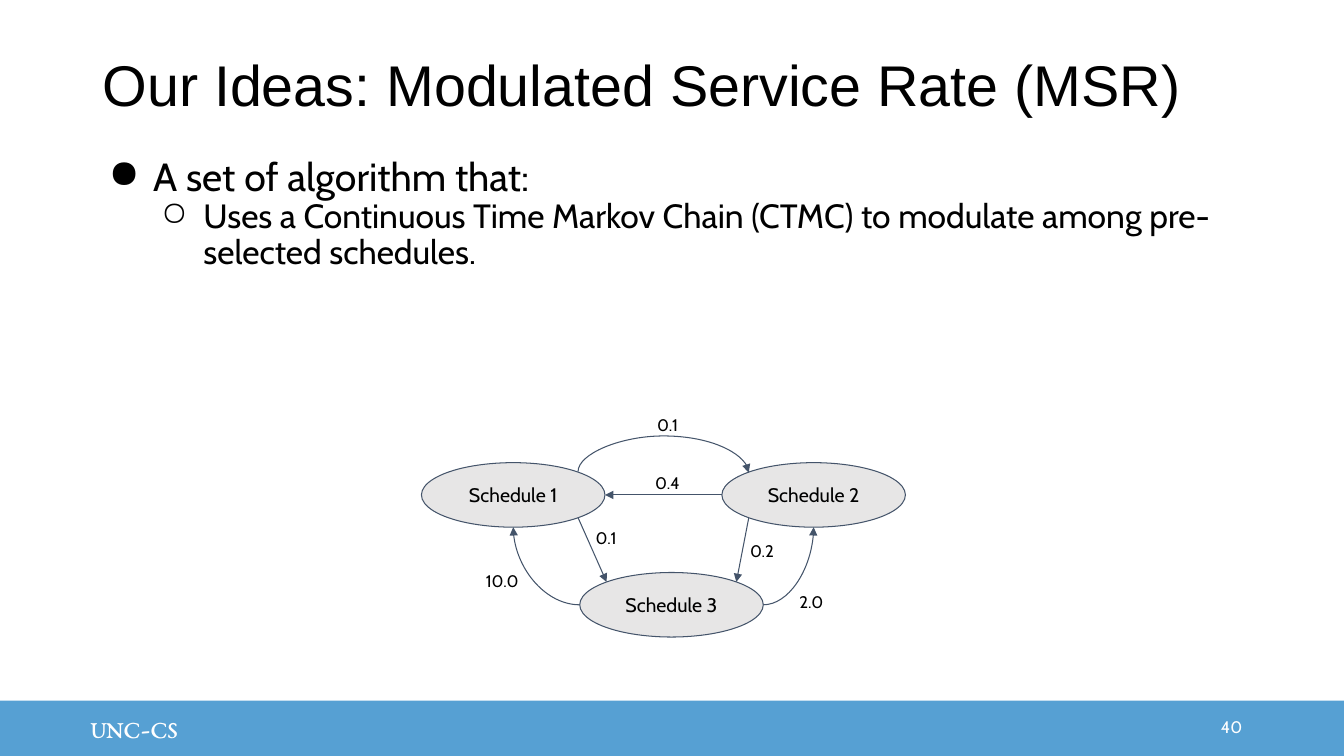
"""Build the slide on the Modulated Service Rate idea."""
import math

import pptx
import pptx.dml.color
import pptx.enum.shapes
import pptx.enum.text
import pptx.oxml
import pptx.oxml.ns
import pptx.util
from lxml import etree
from pptx.util import Inches

COLOURS = {"band": "56A0D3", "state": "E7E6E6", "line": "44546A",
           "ink": "000000", "paper": "FFFFFF"}
ALIGN = pptx.enum.text.PP_ALIGN
ANCHOR = pptx.enum.text.MSO_ANCHOR
SHAPE = pptx.enum.shapes.MSO_SHAPE
CONNECTOR = pptx.enum.shapes.MSO_CONNECTOR
STATE_WIDTH, STATE_HEIGHT = 1.82, 0.64
STATES = {"Schedule 1": (4.18, 4.59), "Schedule 2": (7.16, 4.59),
          "Schedule 3": (5.75, 5.68)}
TOP, TOP_LEFT, LEFT, BOTTOM_LEFT, BOTTOM, BOTTOM_RIGHT, RIGHT, TOP_RIGHT = range(8)
STRAIGHT_LINKS = [("Schedule 2", BOTTOM_LEFT, "Schedule 3", TOP_RIGHT),
                  ("Schedule 2", LEFT, "Schedule 1", RIGHT),
                  ("Schedule 1", BOTTOM_RIGHT, "Schedule 3", TOP_LEFT)]
RATES = [("10.0", 4.72, 5.56, 0.73), ("0.2", 7.34, 5.26, 0.49),
         ("2.0", 7.83, 5.77, 0.49), ("0.1", 5.81, 5.14, 0.49),
         ("0.4", 6.4, 4.59, 0.49), ("0.1", 6.42, 4.01, 0.49)]


def colour(name):
    """Return a named colour."""
    return pptx.dml.color.RGBColor.from_string(COLOURS[name])


def add_child(parent, tag, **attributes):
    """Append a DrawingML element."""
    return etree.SubElement(parent, pptx.oxml.ns.qn(tag), attributes)


def set_values(target, values):
    """Set attributes from a dict."""
    for name, value in values.items():
        setattr(target, name, value)


def set_frame(shape, anchor=ANCHOR.TOP, margins=(0.1, 0.1, 0.1, 0.1)):
    """Set wrapping, anchor and margins of a text frame."""
    frame = shape.text_frame
    left, top, right, bottom = map(Inches, margins)
    set_values(frame, {"word_wrap": True, "vertical_anchor": anchor,
                       "margin_left": left, "margin_top": top,
                       "margin_right": right, "margin_bottom": bottom})
    return frame


def write(para, text, size, font="Cabin", ink="ink", **values):
    """Put formatted text into a paragraph."""
    span = para.add_run()
    span.text = text
    set_values(span.font, {"name": font, "size": pptx.util.Pt(size)})
    span.font.color.rgb = colour(ink)
    set_values(para, values)


def add_text(page, place, text, size, anchor=ANCHOR.TOP,
             margins=(0.1, 0.1, 0.1, 0.1), **values):
    """Add a one-paragraph text box."""
    box = page.shapes.add_textbox(*map(Inches, place))
    frame = set_frame(box, anchor, margins)
    write(frame.paragraphs[0], text, size, **values)
    return box


def add_filled(page, kind, place, fill, margins=(0.1, 0.1, 0.1, 0.1)):
    """Add a filled shape and return it with its first paragraph."""
    shape = page.shapes.add_shape(kind, *map(Inches, place))
    shape.shadow.inherit = False
    shape.fill.solid()
    shape.fill.fore_color.rgb = colour(fill)
    shape.line.fill.background()
    return shape, set_frame(shape, ANCHOR.MIDDLE, margins).paragraphs[0]


def add_bullet(para, mark, left, hanging):
    """Give a paragraph a hanging bullet."""
    properties = para._p.get_or_add_pPr()
    properties.set("marL", str(Inches(left)))
    properties.set("indent", str(-Inches(hanging)))
    add_child(add_child(properties, "a:buClr"), "a:srgbClr", val=COLOURS["ink"])
    add_child(properties, "a:buChar", char=mark)


def add_state(page, name):
    """Add one oval state of the chain."""
    place = (*STATES[name], STATE_WIDTH, STATE_HEIGHT)
    shape, para = add_filled(page, SHAPE.OVAL, place, "state")
    shape.line.color.rgb = colour("line")
    shape.line.width = pptx.util.Pt(0.75)
    write(para, name, 14, alignment=ALIGN.CENTER)
    return shape


def site_point(name, site):
    """Return a connection site, counted anticlockwise from the top."""
    left, top = STATES[name]
    angle = site * math.pi / 4
    return (left + STATE_WIDTH / 2 * (1 - math.sin(angle)),
            top + STATE_HEIGHT / 2 * (1 - math.cos(angle)))


def add_link(page, ovals, start, start_site, end, end_site,
             kind=CONNECTOR.STRAIGHT):
    """Join two states with an arrow."""
    points = (*site_point(start, start_site), *site_point(end, end_site))
    link = page.shapes.add_connector(kind, *map(Inches, points))
    link.line.color.rgb = colour("line")
    link.line.width = pptx.util.Pt(0.75)
    add_child(link.line._get_or_add_ln(), "a:tailEnd", type="triangle")
    add_child(link._element.spPr, "a:effectLst")
    joints = link._element.nvCxnSpPr.cNvCxnSpPr
    for tag, name, site in (("a:stCxn", start, start_site), ("a:endCxn", end, end_site)):
        add_child(joints, tag, id=str(ovals[name].shape_id), idx=str(site))
    return link


def bend(link, preset, turn, flipped):
    """Set preset, rotation in degrees and mirroring of a curve."""
    properties = link._element.spPr
    properties.find(pptx.oxml.ns.qn("a:prstGeom")).set("prst", preset)
    transform = properties.find(pptx.oxml.ns.qn("a:xfrm"))
    transform.set("rot", str(turn * 60000))
    transform.set("flipH", str(int(flipped)))
    transform.set("flipV", "0")


def add_arc(page, ovals, start, end, rise):
    """Arch an arrow over two states on one level."""
    link = add_link(page, ovals, start, TOP_RIGHT, end, TOP_LEFT, CONNECTOR.CURVE)
    span, thickness = link.width, Inches(0.01)
    set_values(link, {"left": link.left + (span - thickness) // 2,
                      "top": link.top - span // 2,
                      "width": thickness, "height": span})
    bend(link, "curvedConnector3", 270, True)
    guides = link._element.spPr.find(".//" + pptx.oxml.ns.qn("a:avLst"))
    ratio = round(-Inches(rise) / thickness * 100000)
    add_child(guides, "a:gd", name="adj1", fmla=f"val {ratio}")


def add_chain(page):
    """Draw the states, transitions and rates."""
    ovals = {name: add_state(page, name) for name in STATES}
    add_arc(page, ovals, "Schedule 1", "Schedule 2", 0.36)
    for link in STRAIGHT_LINKS:
        add_link(page, ovals, *link)
    for site, end, flipped in ((RIGHT, "Schedule 2", True), (LEFT, "Schedule 1", False)):
        curve = add_link(page, ovals, "Schedule 3", site, end, BOTTOM, CONNECTOR.CURVE)
        bend(curve, "curvedConnector2", 180, flipped)
    for text, left, top, width in RATES:
        box = add_text(page, (left, top, width, 0.4), text, 12)
        box.text_frame.auto_size = pptx.enum.text.MSO_AUTO_SIZE.SHAPE_TO_FIT_TEXT


def add_body(page):
    """Add the bulleted text."""
    box = page.shapes.add_textbox(*map(Inches, (0.92, 1.46, 11.5, 2.41)))
    frame = set_frame(box)
    first, second = frame.paragraphs[0], frame.add_paragraph()
    add_bullet(first, "●", 0.5, 0.44)
    write(first, "A set of algorithm that:", 28, line_spacing=0.9)
    add_bullet(second, "○", 1, 0.42)
    write(second, "Uses a Continuous Time Markov Chain (CTMC) to modulate among "
          "pre-selected schedules.", 24, line_spacing=0.9, level=1)


def main():
    """Build and save the deck."""
    deck = pptx.Presentation()
    deck.slide_width, deck.slide_height = Inches(13.33), Inches(7.5)
    page = deck.slides.add_slide(deck.slide_layouts[6])
    band, para = add_filled(page, SHAPE.RECTANGLE, (0, 6.95, 13.33, 0.55),
                            "band", (0.9, 0.05, 0.1, 0.05))
    write(para, "UNC-CS", 18, "EB Garamond", "paper", alignment=ALIGN.LEFT)
    add_text(page, (0.92, 0.15, 11.5, 1.45), "Our Ideas: Modulated Service Rate (MSR)",
             41, ANCHOR.MIDDLE, font="Arial", line_spacing=0.9)
    add_body(page)
    add_text(page, (10.92, 7.01, 1.5, 0.4), "40", 12, ANCHOR.MIDDLE,
             (0.1, 0.05, 0.1, 0.05), ink="paper", alignment=ALIGN.RIGHT)
    add_chain(page)
    deck.save("out.pptx")


if __name__ == "__main__":
    main()
